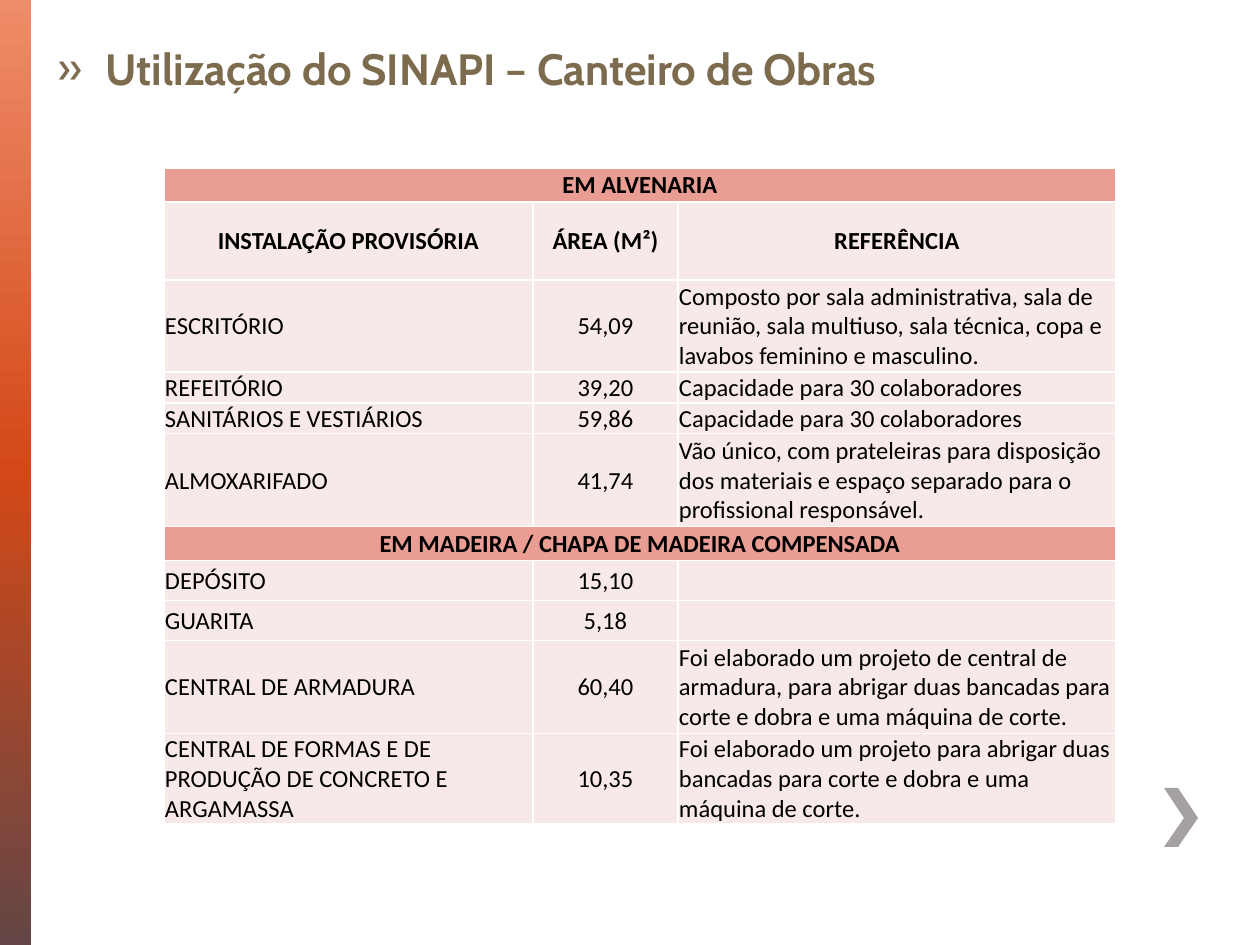
"""Builds a slide with a table of provisional site installations."""
from dataclasses import dataclass

from pptx import Presentation
from pptx.dml.color import RGBColor as RGB
from pptx.enum.shapes import MSO_SHAPE as SHAPE
from pptx.enum.text import MSO_ANCHOR as ANCHOR, PP_ALIGN as ALIGN
from pptx.oxml import parse_xml
from pptx.oxml.ns import nsdecls
from pptx.util import Emu, Pt

PX = 914400 / 126
COLORS = {
    "title": "7C6B4D", "text": "000000", "band": "E99D93", "cell": "F7E9E8",
    "border": "FFFFFF", "chevron": "A6A1A1",
    "bar_top": "EF8C6A", "bar_middle": "D34817", "bar_bottom": "644646",
}
COLUMNS = (369, 145, 438)
CHEVRON = ((1178, 788), (1164, 788), (1184, 818), (1164, 847), (1178, 847), (1198, 818))


@dataclass(frozen=True)
class Row:
    height: int
    texts: tuple[str, ...]
    bold: bool = False


ROWS = (
    Row(34, ("EM ALVENARIA",), True),
    Row(78, ("INSTALAÇÃO PROVISÓRIA", "ÁREA (M²)", "REFERÊNCIA"), True),
    Row(92, ("ESCRITÓRIO", "54,09", "Composto por sala administrativa, sala de reunião, "
             "sala multiuso, sala técnica, copa e lavabos feminino e masculino.")),
    Row(23, ("REFEITÓRIO", "39,20", "Capacidade para 30 colaboradores")),
    Row(23, ("SANITÁRIOS E VESTIÁRIOS", "59,86", "Capacidade para 30 colaboradores")),
    Row(93, ("ALMOXARIFADO", "41,74", "Vão único, com prateleiras para disposição dos "
             "materiais e espaço separado para o profissional responsável.")),
    Row(34, ("EM MADEIRA / CHAPA DE MADEIRA COMPENSADA",), True),
    Row(40, ("DEPÓSITO", "15,10", "")),
    Row(40, ("GUARITA", "5,18", "")),
    Row(93, ("CENTRAL DE ARMADURA", "60,40", "Foi elaborado um projeto de central de "
             "armadura, para abrigar duas bancadas para corte e dobra e uma máquina de corte.")),
    Row(71, ("CENTRAL DE FORMAS E DE PRODUÇÃO DE CONCRETO E ARGAMASSA", "10,35",
             "Foi elaborado um projeto para abrigar duas bancadas para corte e dobra "
             "e uma máquina de corte.")),
)


def px(n: int) -> Emu:
    return Emu(round(n * PX))


def write(tf, text: str, *, size: int, font: str, color: str, bold: bool, align, anchor):
    tf.word_wrap = True
    tf.vertical_anchor = anchor
    p = tf.paragraphs[0]
    p.alignment = align
    r = p.add_run()
    r.text = text
    r.font.size, r.font.name, r.font.bold = Pt(size), font, bold
    r.font.color.rgb = RGB.from_string(COLORS[color])
    return p


def add_title(s) -> None:
    title = s.shapes.title
    title.left, title.top, title.width, title.height = px(45), px(35), px(1171), px(289)
    p = write(title.text_frame, "Utilização do SINAPI – Canteiro de Obras", size=25,
              font="Cabin", color="title", bold=True, align=ALIGN.JUSTIFY, anchor=ANCHOR.TOP)
    p.space_before = Pt(5)
    pPr = p._p.get_or_add_pPr()
    pPr.set("marL", str(px(48)))
    pPr.set("indent", str(-px(48)))
    pPr.append(parse_xml(f'<a:buFont {nsdecls("a")} typeface="Cabin"/>'))
    pPr.append(parse_xml(f'<a:buChar {nsdecls("a")} char="»"/>'))


def add_side_bar(s) -> None:
    bar = s.shapes.add_shape(SHAPE.RECTANGLE, 0, 0, px(31), px(945))
    bar.shadow.inherit = False
    bar.line.fill.background()
    stops = "".join(
        f'<a:gs pos="{i * 50000}"><a:srgbClr val="{COLORS[name]}"/></a:gs>'
        for i, name in enumerate(("bar_top", "bar_middle", "bar_bottom")))
    bar._element.spPr.insert(2, parse_xml(
        f'<a:gradFill {nsdecls("a")} rotWithShape="1"><a:gsLst>{stops}</a:gsLst>'
        '<a:lin ang="5400000" scaled="0"/></a:gradFill>'))


def add_chevron(s) -> None:
    builder = s.shapes.build_freeform(*CHEVRON[0], scale=PX)
    builder.add_line_segments(CHEVRON[1:], close=True)
    sp = builder.convert_to_shape()
    sp.shadow.inherit = False
    sp.fill.solid()
    sp.fill.fore_color.rgb = RGB.from_string(COLORS["chevron"])
    sp.line.fill.background()


def format_cell(cell, fill: str) -> None:
    cell.margin_left = cell.margin_top = cell.margin_right = px(1)
    cell.margin_bottom = 0
    tcPr = cell._tc.get_or_add_tcPr()
    for side in ("lnL", "lnR", "lnT", "lnB"):
        tcPr.append(parse_xml(
            f'<a:{side} {nsdecls("a")} w="12700"><a:solidFill>'
            f'<a:srgbClr val="{COLORS["border"]}"/></a:solidFill></a:{side}>'))
    cell.fill.solid()
    cell.fill.fore_color.rgb = RGB.from_string(COLORS[fill])


def add_installations(s) -> None:
    frame = s.shapes.add_table(len(ROWS), len(COLUMNS), px(164), px(168),
                               px(sum(COLUMNS)), px(sum(row.height for row in ROWS)))
    table = frame.table
    for column, width in zip(table.columns, COLUMNS):
        column.width = px(width)
    for i, row in enumerate(ROWS):
        table.rows[i].height = px(row.height)
        is_band = len(row.texts) == 1
        for cell in table.rows[i].cells:
            format_cell(cell, "band" if is_band else "cell")
        if is_band:
            table.cell(i, 0).merge(table.cell(i, len(COLUMNS) - 1))
        for j, text in enumerate(row.texts):
            cell = table.cell(i, j)
            write(cell.text_frame, text, size=14, font="Calibri", color="text", bold=row.bold,
                  align=ALIGN.CENTER if row.bold or j == 1 else ALIGN.LEFT, anchor=ANCHOR.TOP)
            cell.vertical_anchor = ANCHOR.MIDDLE


def main() -> None:
    prs = Presentation()
    prs.slide_width, prs.slide_height = px(1260), px(945)
    s = prs.slides.add_slide(prs.slide_layouts[5])
    add_side_bar(s)
    add_chevron(s)
    add_title(s)
    add_installations(s)
    prs.save("out.pptx")


if __name__ == "__main__":
    main()
